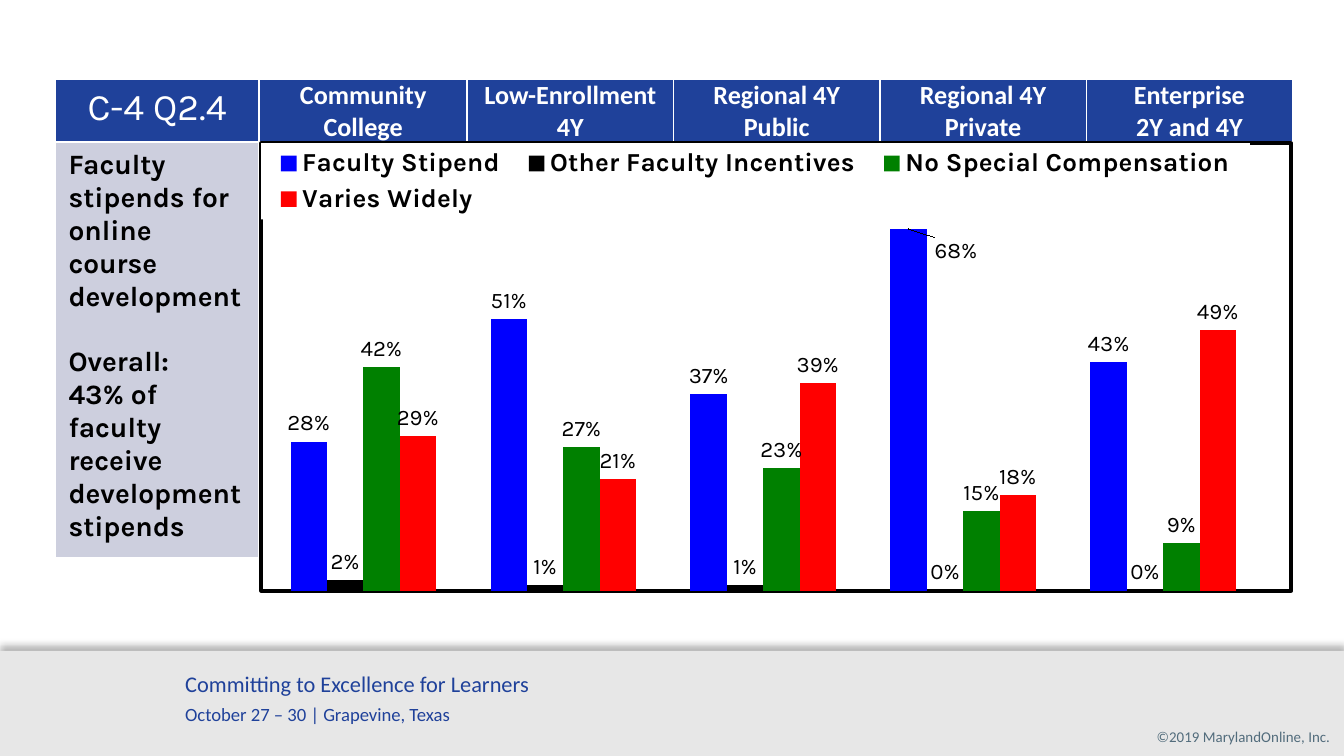
from lxml import etree
from pptx import Presentation
from pptx import util as u
from pptx.chart.data import CategoryChartData
from pptx.dml.color import RGBColor
from pptx.enum import chart as ch, shapes, text
from pptx.oxml import parse_xml
from pptx.oxml.ns import nsdecls, qn

W = u.Inches(10)
H = W * 9 // 16
BLUE, LILAC, WHITE, BLACK = "1F419A", "CDCFDE", "FFFFFF", "000000"
HEADINGS = [["Community College"], ["Low-Enrollment 4Y"], ["Regional 4Y Public"],
            ["Regional 4Y Private"], ["Enterprise", "2Y and 4Y"]]
SIDE_TEXT = ["Faculty stipends for online course development", "Overall:",
             "43% of faculty receive development stipends"]
SERIES = [
    ("Faculty Stipend", "0000FF", (0.28, 0.51, 0.37, 0.68, 0.43)),
    ("Other Faculty Incentives", BLACK, (0.02, 0.01, 0.01, 0, 0)),
    ("No Special Compensation", "008000", (0.42, 0.27, 0.23, 0.15, 0.09)),
    ("Varies Widely", "FF0000", (0.29, 0.21, 0.39, 0.18, 0.49)),
]
NO_LEADER_LINES = (
    f'<c:extLst {nsdecls("c")}><c:ext uri="{{CE6537A1-D6FC-4f65-9D91-7224C49458BB}}" '
    'xmlns:c15="http://schemas.microsoft.com/office/drawing/2012/chart">'
    '<c15:showLeaderLines val="0"/></c:ext></c:extLst>')


def rgb(value):
    return RGBColor.from_string(value)


def box(left, top, width, height):
    """Turn shares of the slide's size into lengths."""
    return int(left * W), int(top * H), int(width * W), int(height * H)


def style(font, size, name, color, bold=False):
    font.size, font.name, font.bold = u.Pt(size), name, bold
    font.color.rgb = rgb(color)


def write(tf, lines, size, name, color, bold=False, align=text.PP_ALIGN.LEFT):
    for i, line in enumerate(lines):
        p = tf.add_paragraph() if i else tf.paragraphs[0]
        p.alignment = align
        r = p.add_run()
        r.text = line
        style(r.font, size, name, color, bold)
    return tf.paragraphs


def fill_cell(cell, color):
    """Fill a cell and give it white borders."""
    cell.fill.solid()
    cell.fill.fore_color.rgb = rgb(color)
    tc_pr = cell._tc.get_or_add_tcPr()
    for i, side in enumerate("LRTB"):
        tc_pr.insert(i, parse_xml(
            f'<a:ln{side} {nsdecls("a")} w="{u.Pt(1)}"><a:solidFill>'
            f'<a:srgbClr val="{WHITE}"/></a:solidFill></a:ln{side}>'))


def add_footer(s, area):
    left, top, width, height = area
    bar = s.shapes.add_shape(shapes.MSO_SHAPE.RECTANGLE, *area)
    bar.fill.solid()
    bar.fill.fore_color.rgb = rgb("E7E7E7")
    bar.line.fill.background()
    bar.shadow.inherit = False
    bar._element.spPr.find(qn("a:effectLst")).append(parse_xml(
        f'<a:outerShdw {nsdecls("a")} blurRad="{u.Pt(4)}" dist="{u.Pt(3)}" dir="16200000">'
        f'<a:srgbClr val="{BLACK}"><a:alpha val="30000"/></a:srgbClr></a:outerShdw>'))

    def text_box(x, y, w, h):
        tf = s.shapes.add_textbox(left + int(x * width), top + int(y * height),
                                  int(w * width), int(h * height)).text_frame
        tf.word_wrap = True
        return tf

    tf = text_box(0.83, 0.67, 0.16, 0.3)
    tf.margin_right = 0
    write(tf, ["©2019 MarylandOnline, Inc."], 8, "Calibri", "526C7C",
          align=text.PP_ALIGN.RIGHT)
    tf = text_box(0.128, 0.12, 0.294, 0.65)
    title, place = write(tf, ["Committing to Excellence for Learners",
                              "October 27 – 30 | Grapevine, Texas"], 12, "Calibri", BLUE)
    place.space_before = u.Pt(3)
    place.runs[0].font.size = u.Pt(10)


def add_results_table(s, area):
    width, height = area[2:]
    table = s.shapes.add_table(2, 6, *area).table
    shares = [0.165, 0.168] + [0.667 / 4] * 4
    for column, share in zip(table.columns, shares):
        column.width = int(width * share)
    table.rows[0].height = u.Inches(0.46)
    table.rows[1].height = height - u.Inches(0.46)
    table.cell(1, 1).merge(table.cell(1, 5))

    corner = table.cell(0, 0)
    fill_cell(corner, BLUE)
    write(corner.text_frame, ["C-4 Q2.4"], 20, "Karla", WHITE, align=text.PP_ALIGN.CENTER)
    for i, lines in enumerate(HEADINGS, 1):
        cell = table.cell(0, i)
        fill_cell(cell, BLUE)
        cell.margin_left = cell.margin_right = u.Inches(0.07)
        cell.margin_top = cell.margin_bottom = 0
        write(cell.text_frame, lines, 14, "Calibri", WHITE, True, text.PP_ALIGN.CENTER)
    for i in range(6):
        fill_cell(table.cell(1, i), LILAC)
    side = write(table.cell(1, 0).text_frame, SIDE_TEXT, 15, "Karla", BLACK, True)
    side[1].space_before = u.Pt(17.5)


def set_layout(parent, index, **values):
    """Give a chart part a manual layout as shares of the chart's size."""
    for old in parent.findall(qn("c:layout")):
        parent.remove(old)
    layout = parse_xml(f'<c:layout {nsdecls("c")}><c:manualLayout/></c:layout>')
    for tag, value in values.items():
        etree.SubElement(layout[0], qn(f"c:{tag}")).set("val", str(value))
    parent.insert(index, layout)


def solid_properties(line):
    return parse_xml(f'<c:spPr {nsdecls("c", "a")}><a:solidFill><a:srgbClr val="{WHITE}"/>'
                     f'</a:solidFill>{line}</c:spPr>')


def add_stipend_chart(s, area):
    data = CategoryChartData(number_format="0%")
    data.categories = ["1", "2", "3", "4", "5"]
    for name, _, values in SERIES:
        data.add_series(name, values)
    chart = s.shapes.add_chart(ch.XL_CHART_TYPE.COLUMN_CLUSTERED, *area, data).chart
    chart.has_title = False
    style(chart.font, 10, "Karla", BLACK)
    chart.category_axis.visible = chart.value_axis.visible = False
    chart.value_axis.has_major_gridlines = False
    chart.value_axis.minimum_scale, chart.value_axis.maximum_scale = 0, 0.8

    plot = chart.plots[0]
    plot.gap_width, plot.overlap, plot.vary_by_categories = 150, 0, False
    for series, (_, color, _) in zip(plot.series, SERIES):
        series.format.fill.solid()
        series.format.fill.fore_color.rgb = rgb(color)
        labels = series.data_labels
        labels.show_value = True
        labels.number_format, labels.number_format_is_linked = "0%", False
        labels.position = ch.XL_LABEL_POSITION.OUTSIDE_END
        style(labels.font, 12, "Karla", BLACK)

    stipend = plot.series[0]
    label = stipend.points[3].data_label
    style(label.font, 12, "Karla", BLACK)
    label.position = ch.XL_LABEL_POSITION.OUTSIDE_END
    set_layout(stipend._element.find(".//" + qn("c:dLbl")), 1, x=0.046, y=0.09)
    stipend._element.find(qn("c:dLbls")).append(parse_xml(NO_LEADER_LINES))

    chart.has_legend = True
    legend = chart.legend
    legend.position = ch.XL_LEGEND_POSITION.RIGHT
    legend.include_in_layout = False
    style(legend.font, 14, "Karla", BLACK, True)
    set_layout(legend._element, 1, xMode="edge", yMode="edge", x=0, y=0, w=0.96, h=0.17)
    legend._element.find(qn("c:overlay")).addnext(solid_properties("<a:ln><a:noFill/></a:ln>"))

    space = chart._chartSpace
    set_layout(space.find(".//" + qn("c:plotArea")), 0, layoutTarget="inner", xMode="edge",
               yMode="edge", x=0.002, y=0.049, w=0.971, h=0.951)
    space.find(qn("c:chart")).addnext(solid_properties(
        f'<a:ln w="{u.Pt(2)}"><a:solidFill><a:srgbClr val="{BLACK}"/></a:solidFill></a:ln>'))


def main():
    prs = Presentation()
    prs.slide_width, prs.slide_height = W, H
    s = prs.slides.add_slide(prs.slide_layouts[6])
    add_footer(s, box(0, 0.861, 1, 0.139))
    add_results_table(s, box(0.041, 0.105, 0.921, 0.59))
    add_stipend_chart(s, box(0.193, 0.187, 0.769, 0.597))
    prs.save("out.pptx")


if __name__ == "__main__":
    main()
